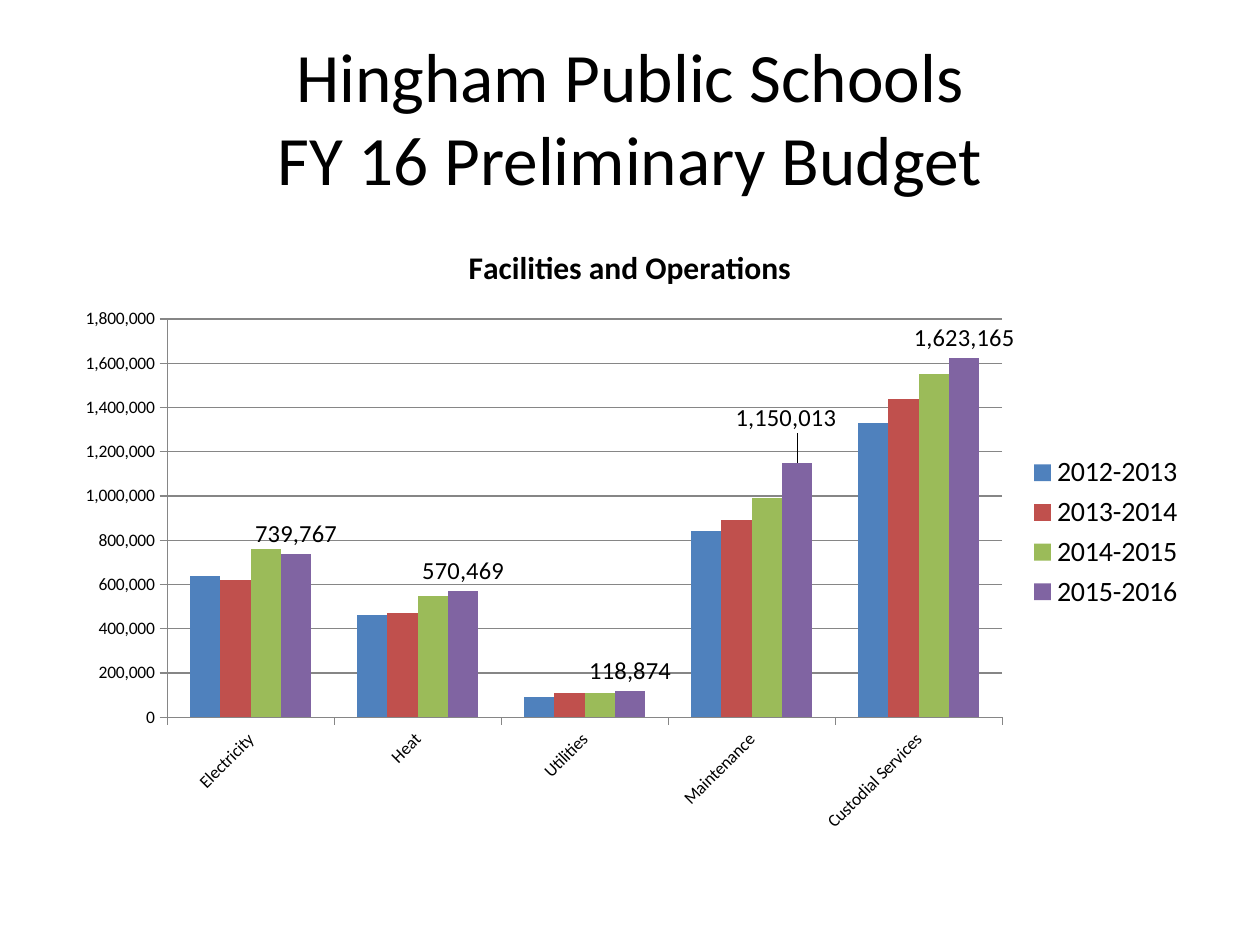
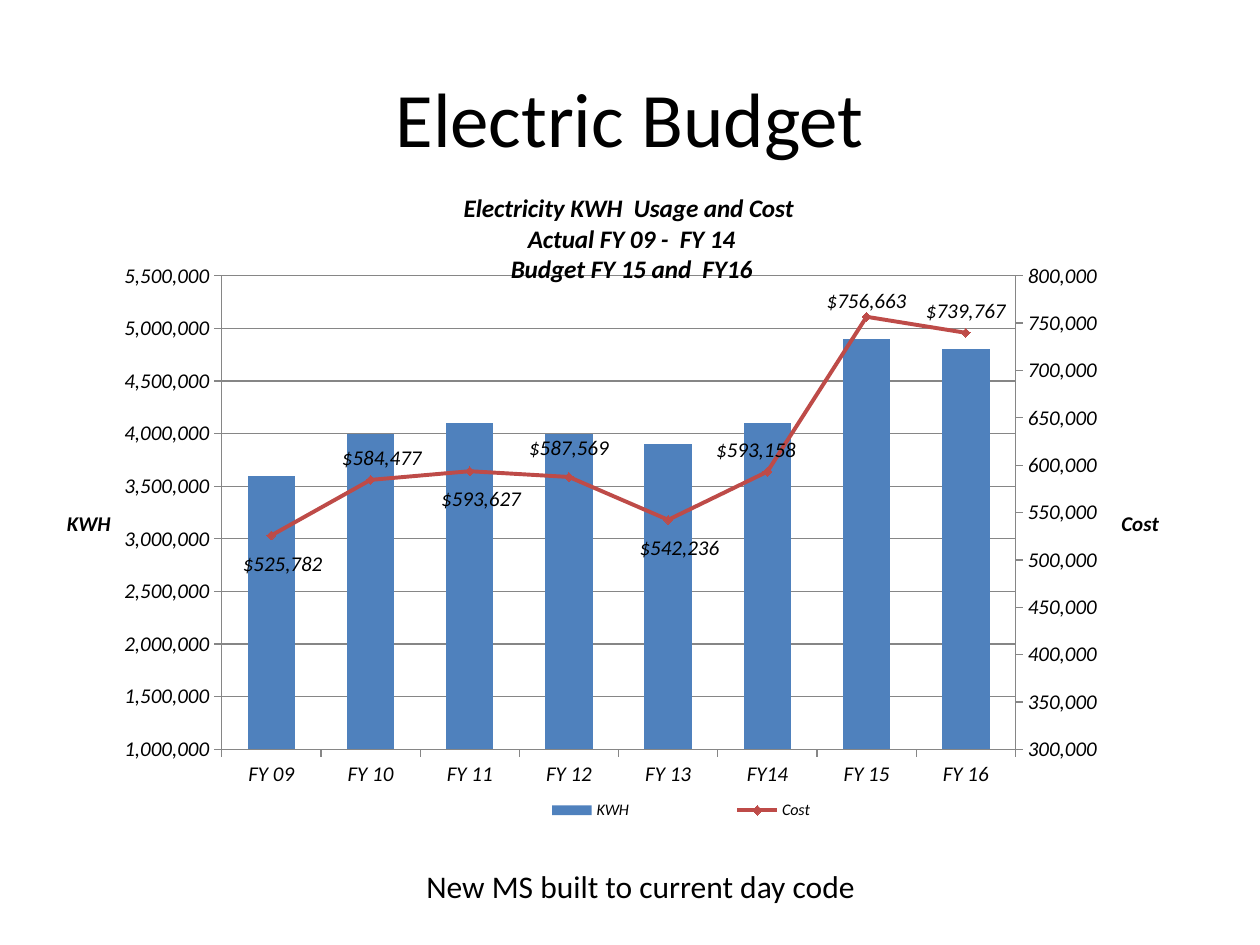
from pptx import Presentation
from pptx import util as u
from pptx.chart.axis import ValueAxis
from pptx.chart.data import CategoryChartData
from pptx.dml.color import RGBColor
from pptx.enum import chart as charts
from pptx.enum import text as texts
from pptx.oxml import parse_xml
from pptx.oxml.ns import nsdecls, qn

PX = 9144  # 100 px to the inch
FONT = "Calibri"
BLACK, GRID = "000000", "868686"
BLUE, RED, GREEN, PURPLE = "4F81BD", "C0504D", "9BBB59", "8064A2"
LINE_RED = "BE4B48"
TITLE_BOX = (50, 30, 900, 125)
ABOVE, BELOW = charts.XL_LABEL_POSITION.ABOVE, charts.XL_LABEL_POSITION.BELOW
OUTSIDE = charts.XL_LABEL_POSITION.OUTSIDE_END
NUMBER = "#,##0"
NO_LEADER_LINES = (
    '<c:ext uri="{CE6537A1-D6FC-4f65-9D91-7224C49458BB}" '
    'xmlns:c15="http://schemas.microsoft.com/office/drawing/2012/chart">'
    '<c15:showLeaderLines val="0"/></c:ext>')


def color(value):
    return RGBColor.from_string(value)


def px(box):
    return [u.Emu(length * PX) for length in box]


def style(font, size, bold=False, italic=False):
    font.name, font.size = FONT, u.Pt(size)
    font.bold, font.italic = bold, italic
    font.color.rgb = color(BLACK)


def write(frame, content, size, **look):
    frame.text = content
    for paragraph in frame.paragraphs:
        paragraph.alignment = texts.PP_ALIGN.CENTER
        for run in paragraph.runs:
            style(run.font, size, **look)


def chart_xml(tag, content="", attributes=""):
    return parse_xml(f"<c:{tag} {nsdecls('c')} {attributes}>{content}</c:{tag}>")


def set_layout(parent, inner=False, **fractions):
    """Place a chart part by fractions of the chart's width and height."""
    for old in parent.findall(qn("c:layout")):
        parent.remove(old)
    content = '<c:layoutTarget val="inner"/>' if inner else ""
    if parent.tag != qn("c:dLbl"):
        content += '<c:xMode val="edge"/><c:yMode val="edge"/>'
    content += "".join(f'<c:{key} val="{value}"/>' for key, value in fractions.items())
    layout = chart_xml("layout", f"<c:manualLayout>{content}</c:manualLayout>")
    before = parent.xpath("c:idx | c:legendPos | c:tx")
    if before:
        before[-1].addnext(layout)
    else:
        parent.insert(0, layout)
    return layout


def label_points(series, places, number_format, size, italic=False):
    """Label each point; places holds (position, x shift, y shift)."""
    for index, (position, x, y) in enumerate(places):
        label = series.points[index].data_label
        style(label.font, size, italic=italic)
        label.position = position
        element = series._element.xpath(f"c:dLbls/c:dLbl[c:idx/@val={index}]")[0]
        number = chart_xml("numFmt", attributes=f'formatCode="{number_format}" sourceLinked="0"')
        set_layout(element, x=x, y=y).addnext(number)
    series._element.find(qn("c:dLbls")).append(chart_xml("extLst", NO_LEADER_LINES))


def format_axis(axis, size, italic=False):
    style(axis.tick_labels.font, size, italic=italic)
    axis.major_tick_mark = charts.XL_TICK_MARK.OUTSIDE
    axis.minor_tick_mark = charts.XL_TICK_MARK.NONE
    axis.format.line.color.rgb = color(GRID)
    axis.format.line.width = u.Pt(0.75)


def format_value_axis(axis, size, low, high, step, italic=False):
    format_axis(axis, size, italic)
    axis.minimum_scale, axis.maximum_scale, axis.major_unit = low, high, step
    axis.tick_labels.number_format = NUMBER
    axis.tick_labels.number_format_is_linked = False


def title_axis(axis, content, x, y):
    write(axis.axis_title.text_frame, content, 12, bold=True, italic=True)
    title = axis._element.find(qn("c:title"))
    body = title.xpath("c:tx/c:rich/a:bodyPr")[0]
    body.set("rot", "0")
    body.set("vert", "horz")
    set_layout(title, x=x, y=y)


def add_columns(slide, box, categories, columns, gap, size, italic=False):
    """Add a column chart with the shared axes; columns maps names to values."""
    data = CategoryChartData(number_format=NUMBER)
    data.categories = categories
    for name, values in columns.items():
        data.add_series(name, values)
    kind = charts.XL_CHART_TYPE.COLUMN_CLUSTERED
    chart = slide.shapes.add_chart(kind, *px(box), data).chart
    style(chart.font, size, italic=italic)
    chart.plots[0].gap_width = gap
    chart.plots[0].overlap = 0
    chart.plots[0].vary_by_categories = False
    for series, fill in zip(chart.plots[0].series, (BLUE, RED, GREEN, PURPLE)):
        series.format.fill.solid()
        series.format.fill.fore_color.rgb = color(fill)
    format_axis(chart.category_axis, size, italic)
    line = chart.value_axis.major_gridlines.format.line
    line.color.rgb, line.width = color(GRID), u.Pt(0.75)
    return chart


def add_legend(chart, position, size, italic=False):
    chart.has_legend = True
    chart.legend.position = position
    chart.legend.include_in_layout = False
    style(chart.legend.font, size, italic=italic)


def move_last_to_line(chart):
    """Turn the last column series into a line on a right axis; return that axis."""
    element = chart.plots[0].series[-1]._element
    for child in element.xpath("c:invertIfNegative | c:spPr"):
        element.remove(child)
    line = chart_xml("lineChart", '<c:grouping val="standard"/><c:varyColors val="0"/>'
                     '<c:marker val="1"/><c:axId val="501"/><c:axId val="502"/>')
    line.insert(2, element)
    chart._chartSpace.xpath(".//c:barChart")[0].addnext(line)

    def axis_xml(tag, own, other, hidden, side, crosses):
        return chart_xml(tag, f'<c:axId val="{own}"/><c:scaling><c:orientation val="minMax"/>'
                         f'</c:scaling><c:delete val="{hidden}"/><c:axPos val="{side}"/>'
                         f'<c:majorTickMark val="out"/><c:minorTickMark val="none"/>'
                         f'<c:tickLblPos val="nextTo"/>'
                         f'<c:crossAx val="{other}"/><c:crosses val="{crosses}"/>')

    right = axis_xml("valAx", 502, 501, 0, "r", "max")
    main_axis = chart.value_axis._element
    main_axis.addnext(right)
    main_axis.addnext(axis_xml("catAx", 501, 502, 1, "b", "autoZero"))
    right_axis = ValueAxis(right)
    right_axis.minor_tick_mark = charts.XL_TICK_MARK.NONE
    return right_axis


def format_line(series, line_color):
    series.smooth = False
    series.format.line.color.rgb, series.format.line.width = color(line_color), u.Pt(2.25)
    marker = series.marker
    marker.style, marker.size = charts.XL_MARKER_STYLE.DIAMOND, 5
    marker.format.fill.solid()
    marker.format.fill.fore_color.rgb = color(RED)
    marker.format.line.color.rgb = color(line_color)


def add_titled_slide(presentation, title, size):
    slide = presentation.slides.add_slide(presentation.slide_layouts[5])
    shape = slide.shapes.title
    shape.left, shape.top, shape.width, shape.height = px(TITLE_BOX)
    shape.text_frame.vertical_anchor = texts.MSO_ANCHOR.MIDDLE
    write(shape.text_frame, title, size)
    return slide


def add_note(slide, box, content):
    frame = slide.shapes.add_textbox(*px(box)).text_frame
    frame.word_wrap = True
    write(frame, content, 18)


def add_facilities_chart(slide, box):
    costs = {
        "2012-2013": (640000, 460000, 90000, 840000, 1330000),
        "2013-2014": (620000, 470000, 110000, 890000, 1440000),
        "2014-2015": (760000, 550000, 110000, 990000, 1550000),
        "2015-2016": (739767, 570469, 118874, 1150013, 1623165),
    }
    categories = ("Electricity", "Heat", "Utilities", "Maintenance", "Custodial Services")
    chart = add_columns(slide, box, categories, costs, 150, 10)
    write(chart.chart_title.text_frame, "Facilities and Operations", 18, bold=True)
    format_value_axis(chart.value_axis, 10, 0, 1800000, 200000)
    chart.category_axis._element.xpath("c:txPr/a:bodyPr")[0].set("rot", "-2700000")
    add_legend(chart, charts.XL_LEGEND_POSITION.RIGHT, 16)
    places = [(OUTSIDE, 0, 0)] * 3 + [(OUTSIDE, -0.01, -0.04), (OUTSIDE, 0, 0)]
    label_points(chart.plots[0].series[-1], places, NUMBER, 14)


def add_electricity_chart(slide, box):
    usage_and_cost = {
        "KWH": (3600000, 4000000, 4100000, 4000000, 3900000, 4100000, 4900000, 4800000),
        "Cost": (525782, 584477, 593627, 587569, 542236, 593158, 756663, 739767),
    }
    years = ("FY 09", "FY 10", "FY 11", "FY 12", "FY 13", "FY14", "FY 15", "FY 16")
    chart = add_columns(slide, box, years, usage_and_cost, 109, 12, italic=True)
    plot_area = chart._chartSpace.xpath("c:chart/c:plotArea")[0]
    set_layout(plot_area, inner=True, x=0.14, y=0.16, w=0.7, h=0.7)
    write(chart.chart_title.text_frame,
          "Electricity KWH  Usage and Cost \nActual FY 09 -  FY 14\nBudget FY 15 and  FY16",
          14.4, bold=True, italic=True)
    set_layout(chart.chart_title._element, x=0.35, y=0.03)
    format_value_axis(chart.value_axis, 12, 1000000, 5500000, 500000, italic=True)
    title_axis(chart.value_axis, "KWH", 0, 0.5)

    right_axis = move_last_to_line(chart)
    format_value_axis(right_axis, 12, 300000, 800000, 50000, italic=True)
    right_axis._element.xpath("c:minorTickMark") or right_axis._element.xpath(
        "c:majorTickMark")[0].addnext(chart_xml("minorTickMark", attributes='val="none"'))
    title_axis(right_axis, "Cost", 0.93, 0.5)
    cost = chart.plots[1].series[0]
    format_line(cost, LINE_RED)
    places = ((BELOW, 0.01, 0.01), (ABOVE, 0.01, 0), (BELOW, 0.01, 0.01), (ABOVE, 0, -0.01),
              (BELOW, 0.01, 0.01), (ABOVE, -0.01, 0), (ABOVE, 0, 0.01), (ABOVE, 0, 0))
    label_points(cost, places, "\\$#,##0", 12, italic=True)
    add_legend(chart, charts.XL_LEGEND_POSITION.BOTTOM, 9.2, italic=True)
    set_layout(chart.legend._element, x=0.34, y=0.93, w=0.41, h=0.04)


def main():
    presentation = Presentation()
    presentation.slide_width, presentation.slide_height = px((1000, 750))
    budget = add_titled_slide(
        presentation, "Hingham Public Schools\vFY 16 Preliminary Budget", 39.6)
    add_facilities_chart(budget, (50, 175, 900, 495))
    electric = add_titled_slide(presentation, "Electric Budget", 44)
    add_note(electric, (242, 683, 533, 40), "New MS built to current day code")
    add_electricity_chart(electric, (50, 133, 900, 537))
    presentation.save("out.pptx")


if __name__ == "__main__":
    main()
